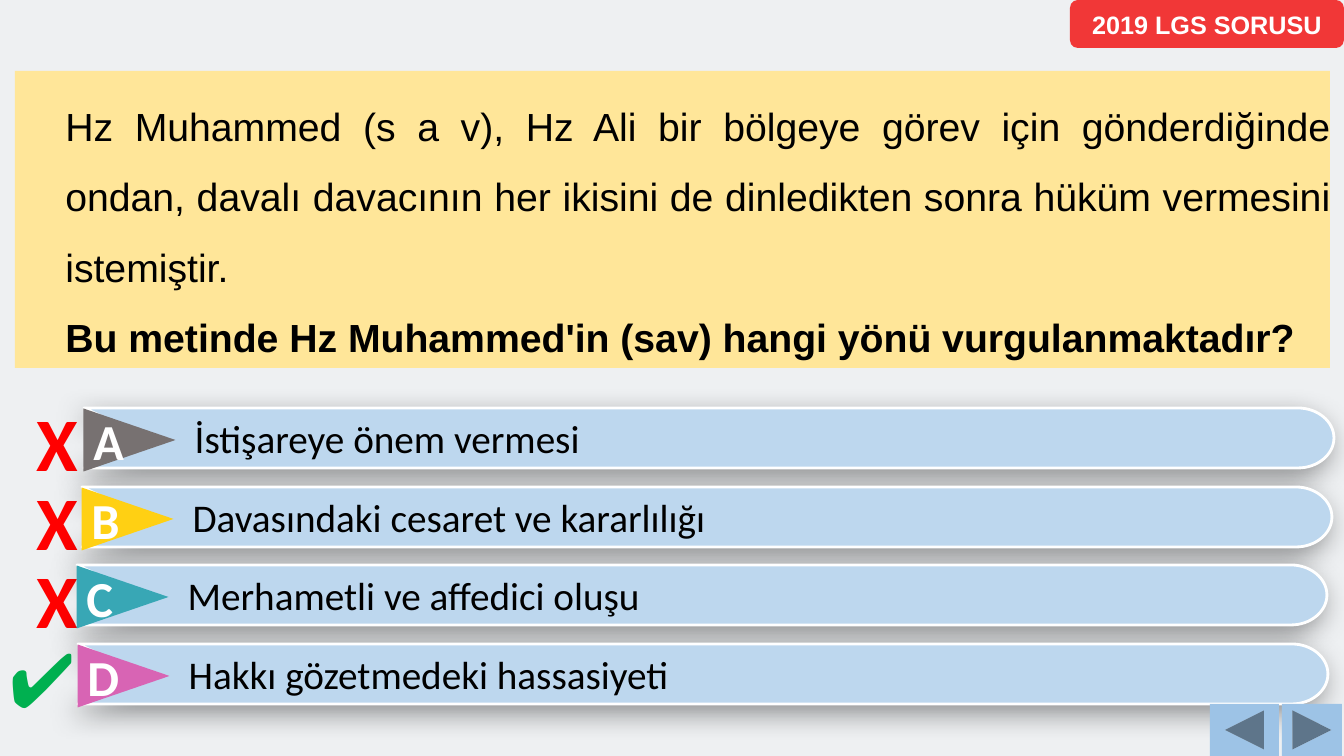
from lxml.etree import SubElement
from pptx import Presentation
from pptx.dml.color import RGBColor
from pptx.enum.shapes import MSO_SHAPE as Preset
from pptx.enum.text import MSO_ANCHOR as Anchor, PP_ALIGN as Align
from pptx.oxml.ns import qn
from pptx.util import Pt

PX = 12192000 / 1344  # EMU in one pixel

THEME = {
    "background": "EEF0F2", "question": "FFE699", "bar": "BDD7EE", "edge": "FFFFFF",
    "button": "9DC3E6", "badge": "F13737", "ink": "000000", "light": "FFFFFF",
    "wrong": "FF0000", "right": "00B050",
    "sans": "Arial", "rounded": "Calibri",
    "mark_size": 54, "letter_size": 36, "text_size": 28, "badge_size": 18,
}


def px(*lengths):
    return [round(length * PX) for length in lengths]


def write(shape, text, font, size, color, bold=False, align=Align.LEFT, inset=None, indent=0):
    """Fill a shape with text and format every paragraph alike."""
    frame = shape.text_frame
    frame.text = text
    frame.word_wrap = True
    frame.vertical_anchor = Anchor.MIDDLE
    if inset is not None:
        frame.margin_left = frame.margin_right = inset
        frame.margin_top = frame.margin_bottom = inset
    for paragraph in frame.paragraphs:
        paragraph.alignment = align
        if indent:
            paragraph.level = indent
            properties = paragraph._p.get_or_add_pPr()
            properties.set("marL", str(indent * 457200))
            properties.set("indent", "0")
        for run in paragraph.runs:
            run.font.name = THEME[font]
            run.font.size = Pt(THEME[size])
            run.font.bold = bold
            run.font.color.rgb = RGBColor.from_string(THEME[color])


deck = Presentation()
deck.slide_width, deck.slide_height = px(1344, 756)
slide = deck.slides.add_slide(deck.slide_layouts[6])

# Backdrop
backdrop = slide.shapes.add_shape(Preset.RECTANGLE, *px(0, 0, 1344, 756))
backdrop.shadow.inherit = False
backdrop.fill.solid()
backdrop.fill.fore_color.rgb = RGBColor.from_string(THEME["background"])
backdrop.line.fill.background()

# Answers: letter, arrow colour, text, bar left, bar top, correct
answers = [
    ("A", "777171", "İstişareye önem vermesi", 84, 408, False),
    ("B", "FFD013", "Davasındaki cesaret ve kararlılığı", 82, 487, False),
    ("C", "38A7B5", "Merhametli ve affedici oluşu", 77, 565, False),
    ("D", "D864B4", "Hakkı gözetmedeki hassasiyeti", 78, 644, True),
]

# Marks beside the answers
for letter, arrow_color, answer, left, top, correct in reversed(answers):
    mark = slide.shapes.add_textbox(*px(0 if correct else 14, top - 1, 86, 69))
    if correct:
        write(mark, "✔", "rounded", "mark_size", "right")
    else:
        write(mark, "X", "rounded", "mark_size", "wrong", bold=True, align=Align.CENTER)

# Answer bars: notched on the left, rounded on the right
BAR_WIDTH, BAR_HEIGHT, CAP, NOTCH = 1250, 60, 36, 63
CURVE = 0.55  # handle length of a quarter ellipse
for letter, arrow_color, answer, left, top, correct in answers:
    row = slide.shapes.add_group_shape()
    half = BAR_HEIGHT / 2
    straight = BAR_WIDTH - CAP
    builder = row.shapes.build_freeform(*px(left, top), scale=1.0)
    outline = [(straight, 0), (BAR_WIDTH, half), (straight, BAR_HEIGHT),
               (0, BAR_HEIGHT), (NOTCH, half)]
    builder.add_line_segments([px(left + x, top + y) for x, y in outline], close=True)
    bar = builder.convert_to_shape()

    # Bend the two segments of the cap into quarter ellipses
    segments = list(bar._element.spPr.iter(qn("a:lnTo")))
    handles = [
        [(straight + CAP * CURVE, 0), (BAR_WIDTH, half * (1 - CURVE))],
        [(BAR_WIDTH, half * (1 + CURVE)), (straight + CAP * CURVE, BAR_HEIGHT)],
    ]
    for segment, controls in zip(segments[1:3], handles):
        segment.tag = qn("a:cubicBezTo")
        for position, control in enumerate(controls):
            x, y = px(*control)
            point = SubElement(segment, qn("a:pt"), x=str(x), y=str(y))
            segment.insert(position, point)

    bar.fill.solid()
    bar.fill.fore_color.rgb = RGBColor.from_string(THEME["bar"])
    bar.line.color.rgb = RGBColor.from_string(THEME["edge"])
    bar.line.width = Pt(2)
    write(bar, answer, "rounded", "text_size", "ink", indent=2)

    # Soft shadow to the lower left
    bar.shadow.inherit = False
    effects = bar._element.spPr.find(qn("a:effectLst"))
    shadow = SubElement(effects, qn("a:outerShdw"), blurRad=str(Pt(20)), dist=str(Pt(7)),
                        dir="8100000", algn="tr", rotWithShape="0")
    shade = SubElement(shadow, qn("a:srgbClr"), val=THEME["ink"])
    SubElement(shade, qn("a:alpha"), val="40000")

    # Arrow with the letter, turned to point right
    arrow = row.shapes.add_shape(Preset.ISOSCELES_TRIANGLE, *px(left + 14, top - 14, 63, 92))
    arrow.rotation = 90
    arrow.shadow.inherit = False
    arrow.fill.solid()
    arrow.fill.fore_color.rgb = RGBColor.from_string(arrow_color)
    arrow.line.fill.background()
    write(arrow, letter, "rounded", "letter_size", "light", bold=True, align=Align.CENTER)
    arrow.text_frame._txBody.bodyPr.set("vert", "vert270")

# Question panel, navigation buttons and badge
panels = []
for preset, color, box in [
    (Preset.RECTANGLE, "question", (15, 71, 1315, 297)),
    (Preset.ACTION_BUTTON_BACK_OR_PREVIOUS, "button", (1210, 704, 69, 52)),
    (Preset.ACTION_BUTTON_FORWARD_OR_NEXT, "button", (1282, 704, 60, 52)),
    (Preset.ROUNDED_RECTANGLE, "badge", (1070, 0, 274, 48)),
]:
    panel = slide.shapes.add_shape(preset, *px(*box))
    panel.shadow.inherit = False
    panel.fill.solid()
    panel.fill.fore_color.rgb = RGBColor.from_string(THEME[color])
    panel.line.fill.background()
    panels.append(panel)
question, back, forward, badge = panels

write(
    question,
    "Hz Muhammed (s a v), Hz Ali bir bölgeye görev için gönderdiğinde ondan, davalı "
    "davacının her ikisini de dinledikten sonra hüküm vermesini istemiştir.\n"
    "Bu metinde Hz Muhammed'in (sav) hangi yönü vurgulanmaktadır?",
    "sans", "text_size", "ink", align=Align.JUSTIFY, inset=0, indent=1,
)
for paragraph in question.text_frame.paragraphs:
    paragraph.line_spacing = 1.5
question.text_frame.paragraphs[1].runs[0].font.bold = True
write(badge, "2019 LGS SORUSU", "sans", "badge_size", "light", bold=True,
      align=Align.CENTER, inset=0)

deck.save("out.pptx")
